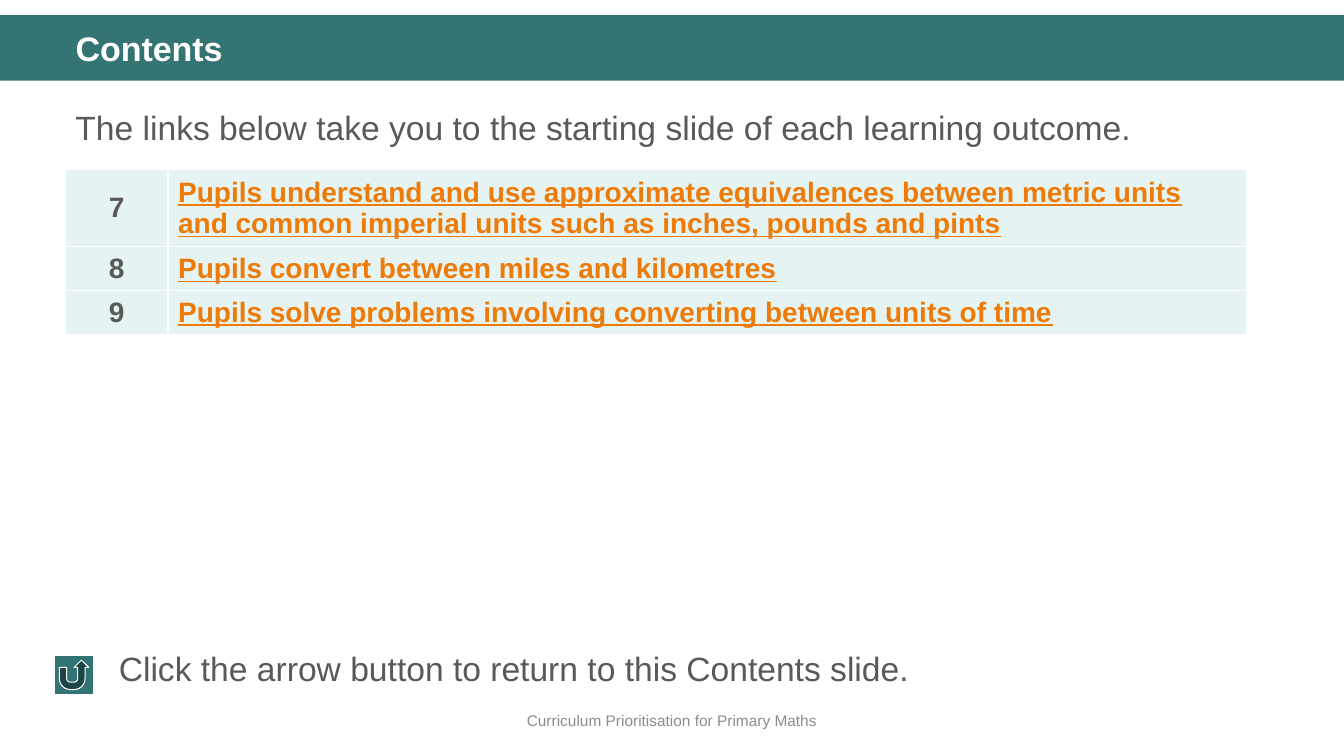
import pptx
import pptx.dml.color
import pptx.enum.shapes
import pptx.enum.text
import pptx.oxml
import pptx.oxml.ns
import pptx.util

COLOURS = {
    "band": "347574",
    "button": "327473",
    "cell": "E5F3F2",
    "link": "EE7B08",
    "body": "595959",
    "footer": "8C8C8C",
    "white": "FFFFFF",
}
SHAPE = pptx.enum.shapes.MSO_SHAPE
ALIGN = pptx.enum.text.PP_ALIGN
ANCHOR = pptx.enum.text.MSO_ANCHOR
AUTO_SIZE = pptx.enum.text.MSO_AUTO_SIZE


def colour(name):
    return pptx.dml.color.RGBColor.from_string(COLOURS[name])


class ContentsSlide:
    """Places styled elements on a grid of 40 columns by 30 rows."""

    COLUMNS, ROWS = 40, 30
    FONT = "Arial"

    def __init__(self, deck):
        self.col = deck.slide_width / self.COLUMNS
        self.row = deck.slide_height / self.ROWS
        self.slide = deck.slides.add_slide(deck.slide_layouts[5])
        self.shapes = self.slide.shapes

    def place(self, left, top, width, height):
        return [int(left * self.col), int(top * self.row),
                int(width * self.col), int(height * self.row)]

    def fill_text(self, frame, text, ink="body", size=24, align=ALIGN.LEFT,
                  spacing=1.0, **font_format):
        paragraph = frame.paragraphs[0]
        paragraph.alignment = align
        paragraph.line_spacing = spacing
        run = paragraph.add_run()
        run.text = text
        font_format.update(name=self.FONT, size=pptx.util.Pt(size))
        for attribute, value in font_format.items():
            setattr(run.font, attribute, value)
        run.font.color.rgb = colour(ink)

    def shape(self, kind, area, fill, line=None):
        shape = self.shapes.add_shape(kind, *self.place(*area))
        shape.shadow.inherit = False
        shape.fill.solid()
        shape.fill.fore_color.rgb = colour(fill)
        if line:
            shape.line.color.rgb = colour(line)
            shape.line.width = pptx.util.Pt(0.75)
        else:
            shape.line.fill.background()

    def text(self, area, text, anchor=ANCHOR.TOP, **style):
        frame = self.shapes.add_textbox(*self.place(*area)).text_frame
        frame.word_wrap = True
        frame.vertical_anchor = anchor
        self.fill_text(frame, text, **style)

    def title(self, area, text, **style):
        title = self.shapes.title
        position = zip(("left", "top", "width", "height"), self.place(*area))
        for attribute, value in position:
            setattr(title, attribute, value)
        frame_format = {"vertical_anchor": ANCHOR.TOP, "word_wrap": True,
                        "auto_size": AUTO_SIZE.NONE}
        for attribute, value in frame_format.items():
            setattr(title.text_frame, attribute, value)
        self.fill_text(title.text_frame, text, **style)
        # Bring the title in front of the band
        title.element.getparent().append(title.element)

    def border(self, cell):
        properties = cell._tc.get_or_add_tcPr()
        for position, side in enumerate(("lnL", "lnR", "lnT", "lnB")):
            properties.insert(position, pptx.oxml.parse_xml(
                f'<a:{side} {pptx.oxml.ns.nsdecls("a")} w="12700"><a:solidFill>'
                f'<a:srgbClr val="{COLOURS["white"]}"/></a:solidFill></a:{side}>'))

    def table(self, left, top, widths, heights, records):
        area = self.place(left, top, sum(widths), sum(heights))
        table = self.shapes.add_table(len(heights), len(widths), *area).table
        table.first_row = table.horz_banding = False
        for column, width in zip(table.columns, widths):
            column.width = int(width * self.col)
        for row, height, record in zip(table.rows, heights, records):
            row.height = int(height * self.row)
            styles = ({"align": ALIGN.CENTER}, {"ink": "link", "underline": True})
            for cell, text, style in zip(row.cells, record, styles):
                cell.vertical_anchor = ANCHOR.MIDDLE
                cell.fill.solid()
                cell.fill.fore_color.rgb = colour("cell")
                self.border(cell)
                self.fill_text(cell.text_frame, text, size=20, bold=True, **style)


def main():
    deck = pptx.Presentation()
    deck.slide_width = pptx.util.Inches(13.33)
    deck.slide_height = pptx.util.Inches(7.5)
    contents = ContentsSlide(deck)
    margin, text_width = 1.95, 36.55

    # Heading band and footer
    contents.shape(SHAPE.RECTANGLE, (0, 0.6, 40, 2.6), "band")
    contents.text((0, 27.8, 40, 1.6), "Curriculum Prioritisation for Primary Maths",
                  anchor=ANCHOR.MIDDLE, ink="footer", size=11, align=ALIGN.CENTER)

    # Learning outcomes
    contents.text((margin, 3.72, text_width, 2.6),
                  "The links below take you to the starting slide of each learning outcome.",
                  spacing=1.2)
    outcomes = [
        ("7", "Pupils understand and use approximate equivalences between metric units "
              "and common imperial units such as inches, pounds and pints"),
        ("8", "Pupils convert between miles and kilometres"),
        ("9", "Pupils solve problems involving converting between units of time"),
    ]
    contents.table(margin, 6.72, (3.05, 32.1), (2.84, 1.64, 1.64), outcomes)

    # Return button and its explanation
    contents.shape(SHAPE.ACTION_BUTTON_RETURN, (1.62, 26, 1.17, 1.56),
                   "button", line="white")
    contents.text((3.24, 25.52, 33.97, 2),
                  "Click the arrow button to return to this Contents slide.")

    # Title
    contents.title((margin, 1.08, text_width, 1.88), "Contents", ink="white",
                   size=24.3, spacing=0.9, bold=True)

    deck.save("out.pptx")


if __name__ == "__main__":
    main()
